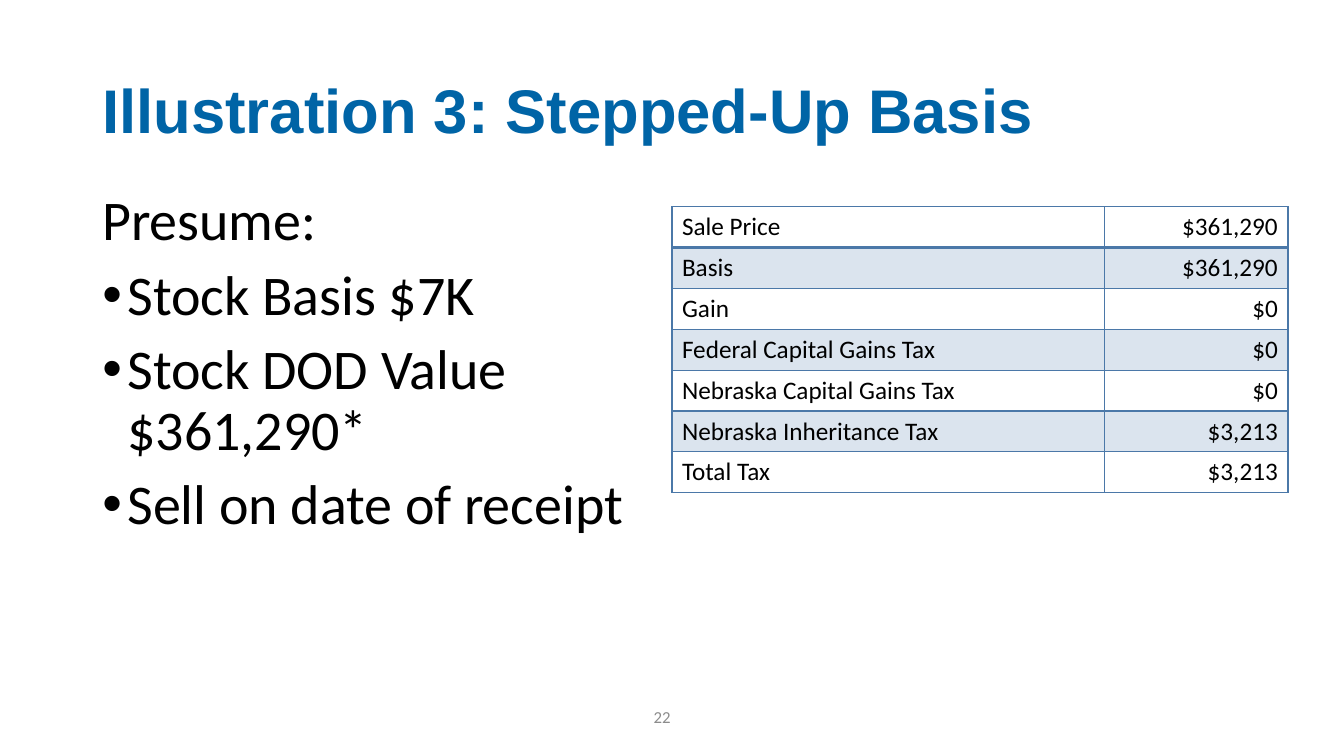
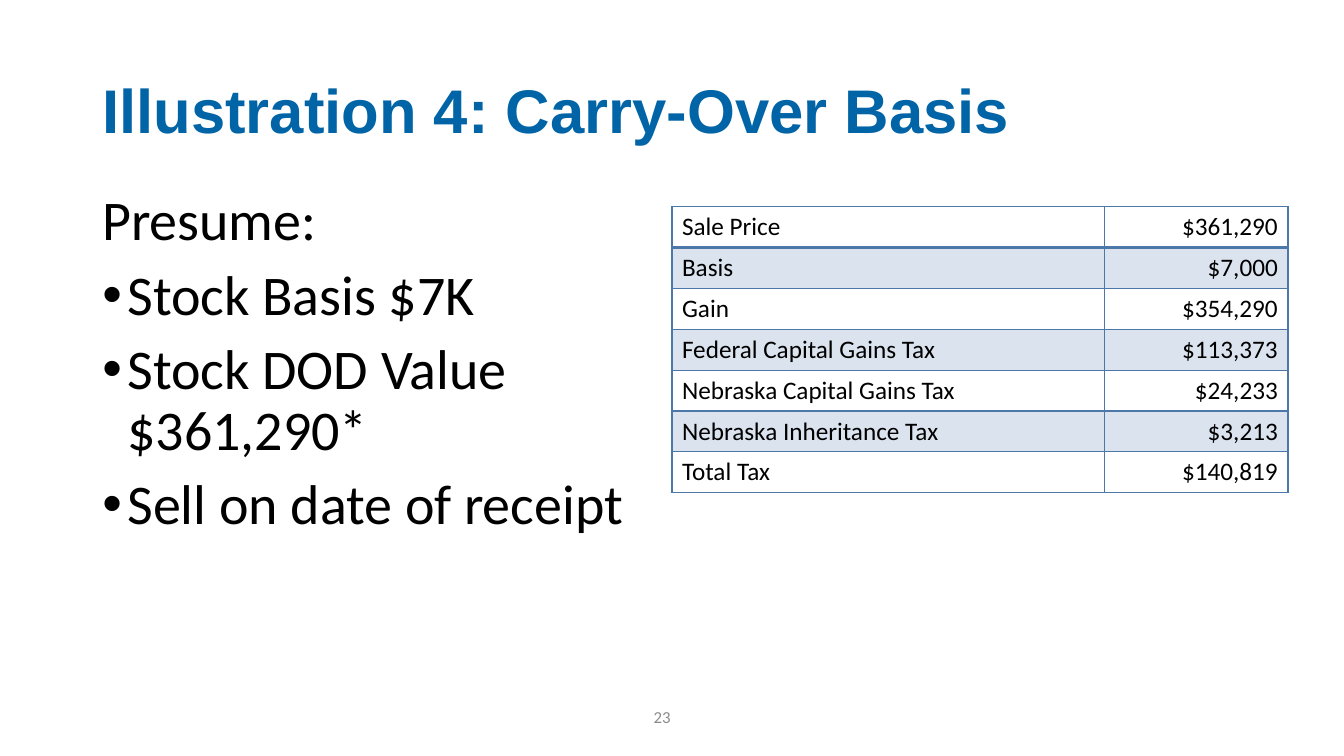
from lxml.etree import SubElement
from pptx import Presentation
from pptx.dml.color import RGBColor
from pptx.enum.text import MSO_ANCHOR, MSO_AUTO_SIZE, PP_ALIGN
from pptx.oxml.ns import qn
from pptx.util import Pt

COLORS = {
    "title": "0064A6",
    "text": "000000",
    "number": "8C8C8C",
    "border": "4B78A8",
    "band": "DBE4EE",
}
TITLE_FONT, BODY_FONT = "Arial", "Calibri"
LEFT = 66
COL_WIDTHS = (309, 131)
ROW_HEIGHT = 29.2

PREMISES = ["Stock Basis $7K", "Stock DOD Value $361,290*", "Sell on date of receipt"]
ROW_LABELS = [
    "Sale Price", "Basis", "Gain", "Federal Capital Gains Tax",
    "Nebraska Capital Gains Tax", "Nebraska Inheritance Tax", "Total Tax",
]
ILLUSTRATIONS = [
    (22, "Illustration 3: Stepped-Up Basis",
     ["$361,290", "$361,290", "$0", "$0", "$0", "$3,213", "$3,213"]),
    (23, "Illustration 4: Carry-Over Basis",
     ["$361,290", "$7,000", "$354,290", "$113,373", "$24,233", "$3,213", "$140,819"]),
]


def style_runs(p, size, color, font=BODY_FONT, bold=False):
    for r in p.runs:
        r.font.name = font
        r.font.size = Pt(size)
        r.font.bold = bold
        r.font.color.rgb = RGBColor.from_string(COLORS[color])


def add_text_box(slide, left, top, width, height):
    tf = slide.shapes.add_textbox(Pt(left), Pt(top), Pt(width), Pt(height)).text_frame
    tf.word_wrap = True
    return tf


def set_title(slide, text):
    sp = slide.shapes.title
    sp.left, sp.top, sp.width, sp.height = Pt(LEFT), Pt(28.8), Pt(828), Pt(104.4)
    tf = sp.text_frame
    tf.text = text
    tf.auto_size = MSO_AUTO_SIZE.NONE
    tf.vertical_anchor = MSO_ANCHOR.MIDDLE
    p = tf.paragraphs[0]
    p.alignment = PP_ALIGN.LEFT
    p.line_spacing = 0.9
    style_runs(p, 44, "title", TITLE_FONT, bold=True)


def add_bullet(p, indent=18):
    pPr = p._p.get_or_add_pPr()
    pPr.set("marL", str(Pt(indent)))
    pPr.set("indent", str(-Pt(indent)))
    SubElement(pPr, qn("a:buFont"), typeface="Arial")
    SubElement(pPr, qn("a:buChar"), char="•")


def add_premises(slide, heading, items):
    tf = add_text_box(slide, LEFT, 134, 410.4, 313.2)
    tf.text = heading
    for item in items:
        p = tf.add_paragraph()
        p.text = item
        add_bullet(p)
        p.space_before = Pt(10)
    for p in tf.paragraphs:
        p.line_spacing = 0.9
        style_runs(p, 40, "text")


def set_borders(cell, bottom=1, top=1):
    tcPr = cell._tc.get_or_add_tcPr()
    sides = (("a:lnL", 1), ("a:lnR", 1), ("a:lnT", top), ("a:lnB", bottom))
    for tag, width in sides:
        ln = SubElement(tcPr, qn(tag), w=str(Pt(width)))
        fill = SubElement(ln, qn("a:solidFill"))
        SubElement(fill, qn("a:srgbClr"), val=COLORS["border"])


def add_tax_table(slide, values):
    rows = list(zip(ROW_LABELS, values))
    table = slide.shapes.add_table(
        len(rows), 2, Pt(480), Pt(147.6),
        Pt(sum(COL_WIDTHS)), Pt(ROW_HEIGHT * len(rows))).table
    table.first_row = table.horz_banding = False
    for column, width in zip(table.columns, COL_WIDTHS):
        column.width = Pt(width)
    for i, row in enumerate(rows):
        table.rows[i].height = Pt(ROW_HEIGHT)
        for j, text in enumerate(row):
            cell = table.cell(i, j)
            cell.text = text
            p = cell.text_frame.paragraphs[0]
            p.alignment = PP_ALIGN.RIGHT if j else PP_ALIGN.LEFT
            style_runs(p, 18, "text")
            # The first row is set off by a heavier rule
            set_borders(cell, bottom=2 if i == 0 else 1, top=2 if i == 1 else 1)
            if i % 2:
                cell.fill.solid()
                cell.fill.fore_color.rgb = RGBColor.from_string(COLORS["band"])
            else:
                cell.fill.background()


def add_slide_number(slide, number):
    tf = add_text_box(slide, 365, 497.5, 216, 28.8)
    tf.vertical_anchor = MSO_ANCHOR.MIDDLE
    tf.text = str(number)
    p = tf.paragraphs[0]
    p.alignment = PP_ALIGN.CENTER
    style_runs(p, 12, "number")


def main():
    prs = Presentation()
    prs.slide_width, prs.slide_height = Pt(960), Pt(540)
    for number, title, values in ILLUSTRATIONS:
        slide = prs.slides.add_slide(prs.slide_layouts[5])
        set_title(slide, title)
        add_premises(slide, "Presume:", PREMISES)
        add_tax_table(slide, values)
        add_slide_number(slide, number)
    prs.save("out.pptx")


if __name__ == "__main__":
    main()
